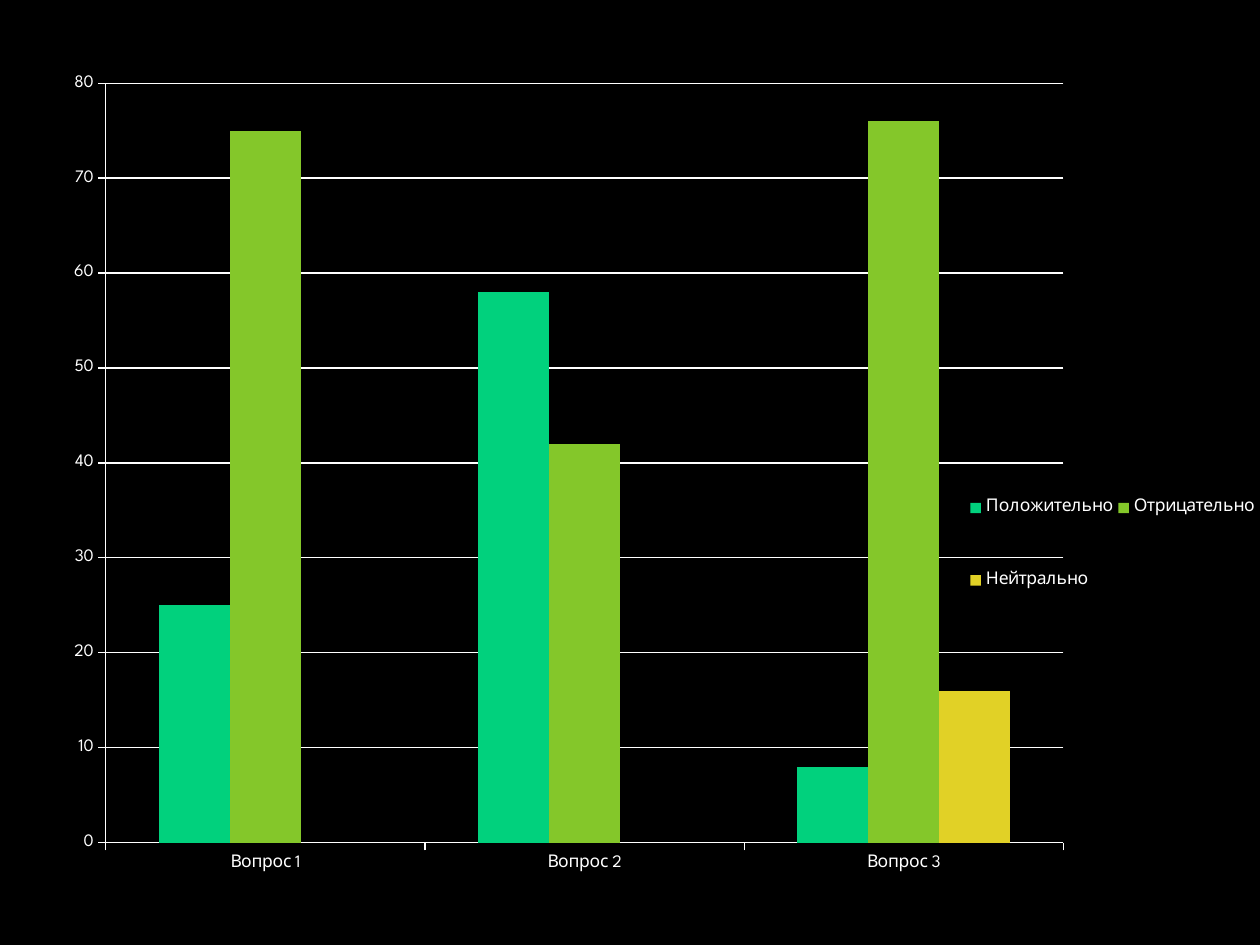
import pptx
import pptx.chart.data
import pptx.dml.color
import pptx.enum.chart
import pptx.oxml
import pptx.oxml.ns
import pptx.util
from pptx.util import Inches

FONT = "League Spartan"
WHITE = "FFFFFF"
BLACK = "000000"
CHART_WIDTH, CHART_HEIGHT = 10.71, 6.98
QUESTIONS = ["Вопрос 1", "Вопрос 2", "Вопрос 3"]
ANSWERS = [
    ("Положительно", [25, 58, 8], "01D17D"),
    ("Отрицательно", [75, 42, 76], "84C72A"),
    ("Нейтрально", [None, None, 16], "E1D126"),
]


def color(value):
    return pptx.dml.color.RGBColor.from_string(value)


def fill_solid(fill, value):
    fill.solid()
    fill.fore_color.rgb = color(value)


def manual_layout(left, top, width, height, inner=False):
    """Return a c:layout element from inches measured inside the chart."""
    target = '<c:layoutTarget val="inner"/>' if inner else ""
    return pptx.oxml.parse_xml(
        f'<c:layout {pptx.oxml.ns.nsdecls("c")}><c:manualLayout>{target}'
        '<c:xMode val="edge"/><c:yMode val="edge"/>'
        f'<c:x val="{left / CHART_WIDTH}"/><c:y val="{top / CHART_HEIGHT}"/>'
        f'<c:w val="{width / CHART_WIDTH}"/><c:h val="{height / CHART_HEIGHT}"/>'
        "</c:manualLayout></c:layout>"
    )


def remove_layout(element):
    for layout in element.findall(pptx.oxml.ns.qn("c:layout")):
        element.remove(layout)


class SlideBuilder:
    """Holds the chart style and the current slide."""

    def __init__(self, page, font=FONT, size=10, ink=WHITE):
        self.page = page
        self.font = font
        self.size = size
        self.ink = ink

    def background(self, value):
        fill_solid(self.page.background.fill, value)

    def column_chart(self, left, top, categories, series, plot_area):
        data = pptx.chart.data.CategoryChartData()
        data.categories = categories
        for name, values, _ in series:
            data.add_series(name, values)
        chart = self.page.shapes.add_chart(
            pptx.enum.chart.XL_CHART_TYPE.COLUMN_CLUSTERED,
            Inches(left), Inches(top), Inches(CHART_WIDTH), Inches(CHART_HEIGHT), data,
        ).chart
        chart.has_title = False
        chart.font.name = self.font
        chart.font.size = pptx.util.Pt(self.size)
        chart.font.color.rgb = color(self.ink)

        plot = chart.plots[0]
        plot.gap_width = 150
        plot.vary_by_categories = False
        for bars, (_, _, value) in zip(plot.series, series):
            fill_solid(bars.format.fill, value)
            bars.invert_if_negative = False

        area = plot._element.getparent()
        remove_layout(area)
        area.insert(0, manual_layout(*plot_area, inner=True))
        return chart

    def axis(self, axis, gridlines=False):
        axis.major_tick_mark = pptx.enum.chart.XL_TICK_MARK.OUTSIDE
        axis.minor_tick_mark = pptx.enum.chart.XL_TICK_MARK.NONE
        axis.has_major_gridlines = gridlines
        lines = [axis.format.line]
        if gridlines:
            lines.append(axis.major_gridlines.format.line)
        for line in lines:
            fill_solid(line.fill, self.ink)
            line.width = pptx.util.Pt(0.7)

    def legend(self, chart, area):
        chart.has_legend = True
        legend = chart.legend
        legend.position = pptx.enum.chart.XL_LEGEND_POSITION.RIGHT
        legend.include_in_layout = False
        remove_layout(legend._element)
        position = legend._element.find(pptx.oxml.ns.qn("c:legendPos"))
        position.addnext(manual_layout(*area))


def main():
    deck = pptx.Presentation()
    deck.slide_width, deck.slide_height = Inches(10), Inches(7.5)
    builder = SlideBuilder(deck.slides.add_slide(deck.slide_layouts[6]))
    builder.background(BLACK)

    chart = builder.column_chart(0.2, 0.52, QUESTIONS, ANSWERS, (0.64, 0.14, 7.6, 6.03))
    builder.axis(chart.category_axis)
    builder.axis(chart.value_axis, gridlines=True)
    chart.value_axis.minimum_scale = 0
    chart.value_axis.maximum_scale = 80
    chart.value_axis.major_unit = 10
    builder.legend(chart, (7.46, 3, 2.34, 1.6))
    deck.save("out.pptx")


if __name__ == "__main__":
    main()
